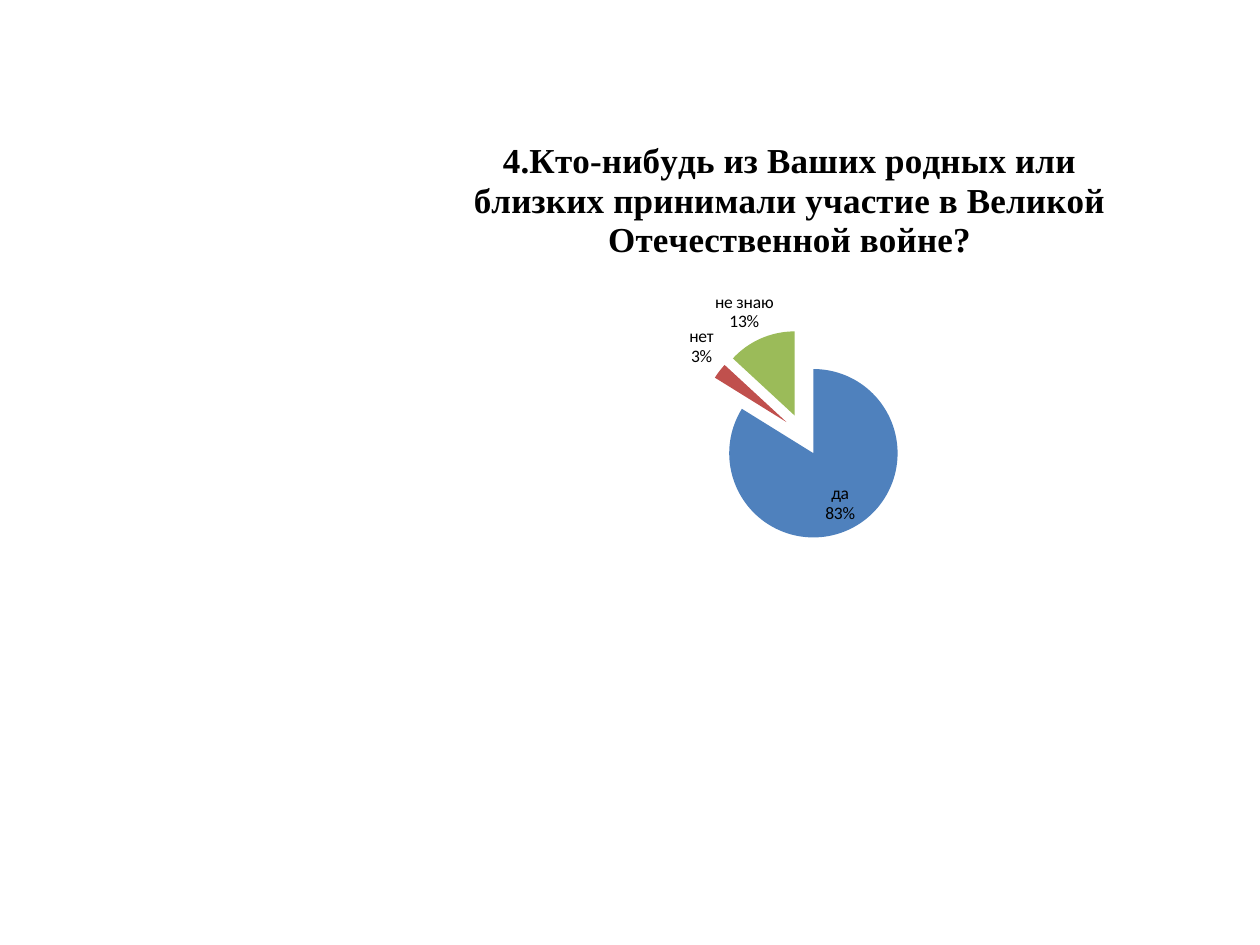
from lxml.etree import Element, SubElement
from pptx import Presentation
from pptx.chart.data import CategoryChartData
from pptx.dml.color import RGBColor
from pptx.enum.chart import XL_CHART_TYPE, XL_LABEL_POSITION
from pptx.oxml.ns import qn
from pptx.util import Cm, Pt

BLACK = RGBColor(0x00, 0x00, 0x00)
BLUE = RGBColor(0x4F, 0x81, 0xBD)
RED = RGBColor(0xC0, 0x50, 0x4D)
GREEN = RGBColor(0x9B, 0xBB, 0x59)


class SurveySlide:
    """Holds the style and the current slide, and adds elements to it."""

    title_font, label_font = "Times New Roman", "Calibri"
    title_size, label_size = Pt(20), Pt(10)
    explosion = 25

    def __init__(self, prs):
        self.s = prs.slides.add_slide(prs.slide_layouts[6])

    def pie(self, question, answers, left, top, width, height):
        data = CategoryChartData()
        data.categories = [name for name, _, _ in answers]
        data.add_series("Series 1", [value for _, value, _ in answers])
        chart = self.s.shapes.add_chart(
            XL_CHART_TYPE.PIE, left, top, width, height, data).chart
        chart.font.name = self.label_font
        chart.font.size = self.label_size
        chart.font.color.rgb = BLACK
        chart.has_legend = False
        self.title(chart, question)
        plot = chart.plots[0]
        plot.vary_by_categories = True
        self.slices(plot.series[0], [color for _, _, color in answers])
        self.labels(plot)

    def title(self, chart, text):
        chart.has_title = True
        chart.chart_title.include_in_layout = False
        p = chart.chart_title.text_frame.paragraphs[0]
        p.text = text
        p.font.name = self.title_font
        p.font.size = self.title_size
        p.font.bold = True
        p.font.color.rgb = BLACK

    def slices(self, series, colors):
        for i, color in enumerate(colors):
            fill = series.points[i].format.fill
            fill.solid()
            fill.fore_color.rgb = color
        explosion = Element(qn("c:explosion"), val=str(self.explosion))
        series._element.find(qn("c:dPt")).addprevious(explosion)

    def labels(self, plot):
        plot.has_data_labels = True
        labels = plot.data_labels
        labels.show_category_name = True
        labels.show_value = True
        labels.show_percentage = False
        labels.number_format = '0"%"'
        labels.number_format_is_linked = False
        labels.position = XL_LABEL_POSITION.BEST_FIT
        labels.font.name = self.label_font
        labels.font.size = self.label_size
        labels.font.color.rgb = BLACK
        separator = SubElement(labels._element, qn("c:separator"))
        separator.text = "\n"
        labels._element.find(qn("c:showBubbleSize")).addnext(separator)


def main():
    prs = Presentation()
    prs.slide_width, prs.slide_height = Cm(25.4), Cm(19.05)
    SurveySlide(prs).pie(
        "4.Кто-нибудь из Ваших родных или близких принимали участие "
        "в Великой Отечественной войне?",
        [("да", 83, BLUE), ("нет", 3, RED), ("не знаю", 13, GREEN)],
        Cm(7.5), Cm(2.34), Cm(16.84), Cm(8.9))
    prs.save("out.pptx")


if __name__ == "__main__":
    main()
